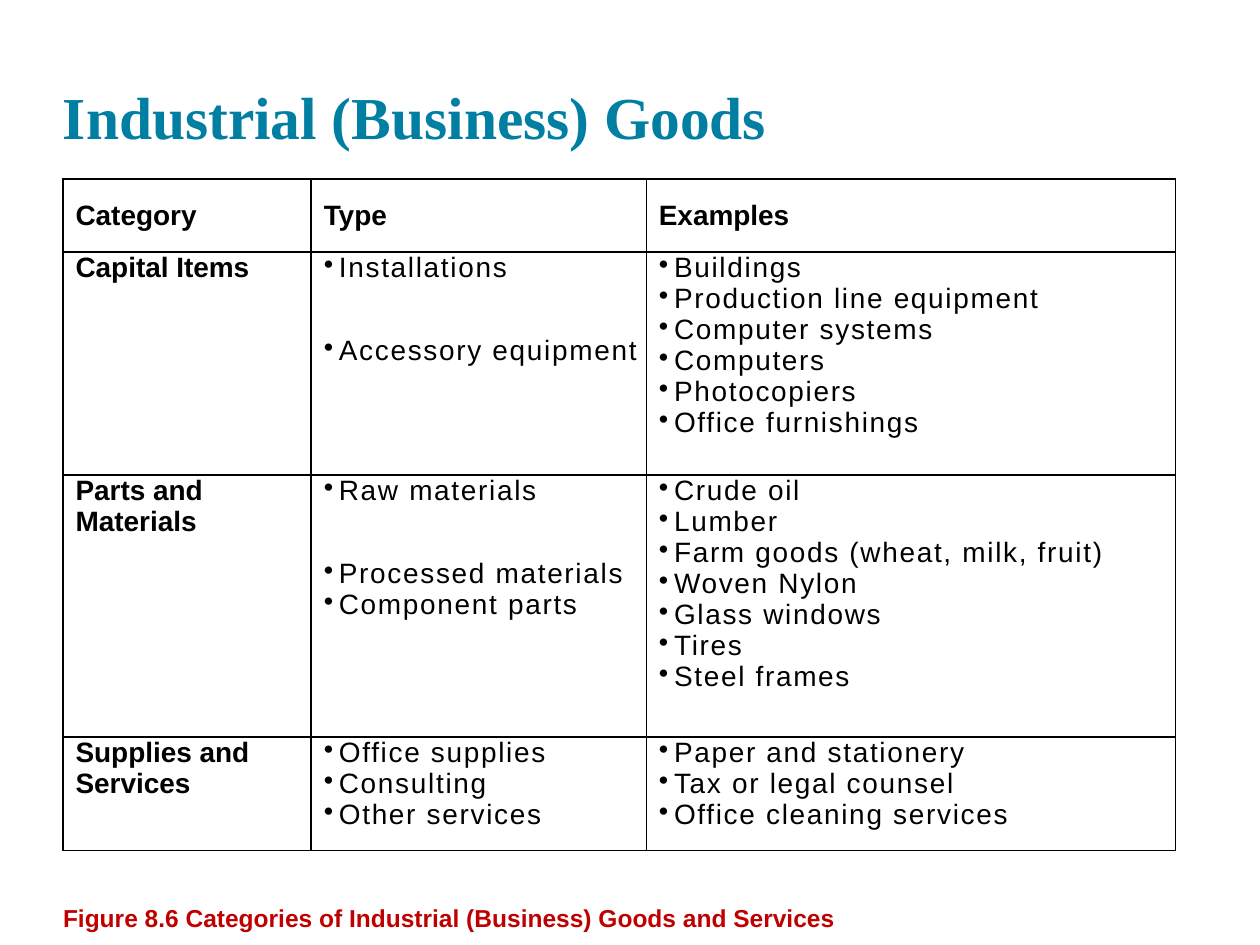
from lxml.etree import SubElement as Sub
from pptx import Presentation as Deck
from pptx.dml.color import RGBColor as Rgb
from pptx.enum.text import MSO_ANCHOR as Anchor
from pptx.oxml.ns import qn
from pptx.util import Inches, Pt

WIDE, HIGH = Inches(10), Inches(7.5)
INK = {"title": "007FA3", "text": "000000", "note": "C00000"}

# Table grid, in percent of the slide's width and height
COLS = [19.7, 26.6, 42]
ROWS = [7.73, 23.6, 27.73, 12]

HEAD = ["Category", "Type", "Examples"]
# Each group: name, types, examples, index of the type set apart by a gap
GROUPS = [
    ("Capital Items",
     ["Installations", "Accessory equipment"],
     ["Buildings", "Production line equipment", "Computer systems",
      "Computers", "Photocopiers", "Office furnishings"], 1),
    ("Parts and Materials",
     ["Raw materials", "Processed materials", "Component parts"],
     ["Crude oil", "Lumber", "Farm goods (wheat, milk, fruit)",
      "Woven Nylon", "Glass windows", "Tires", "Steel frames"], 1),
    ("Supplies and Services",
     ["Office supplies", "Consulting", "Other services"],
     ["Paper and stationery", "Tax or legal counsel",
      "Office cleaning services"], None),
]


def across(part):
    return round(WIDE * part / 100)


def down(part):
    return round(HIGH * part / 100)


def add_run(para, text, size, ink, bold=True, face="Arial"):
    run = para.add_run()
    run.text = text
    font = run.font
    font.name, font.size, font.bold = face, Pt(size), bold
    font.color.rgb = Rgb.from_string(INK[ink])
    return run


def add_text(slide, box, text, size, ink, face="Arial", anchor=Anchor.TOP):
    left, top, width, height = box
    frame = slide.shapes.add_textbox(
        across(left), down(top), across(width), down(height)).text_frame
    frame.word_wrap = True
    frame.vertical_anchor = anchor
    frame.margin_left = frame.margin_right = 0
    frame.margin_top = frame.margin_bottom = 0
    add_run(frame.paragraphs[0], text, size, ink, face=face)


def add_edges(cell):
    props = cell._tc.get_or_add_tcPr()
    for side in ("lnL", "lnR", "lnT", "lnB"):
        line = Sub(props, qn(f"a:{side}"), w=str(Pt(1)))
        fill = Sub(line, qn("a:solidFill"))
        Sub(fill, qn("a:srgbClr"), val=INK["text"])


def style_cell(cell, anchor):
    add_edges(cell)
    cell.fill.background()
    cell.vertical_anchor = anchor
    cell.margin_left, cell.margin_right = Inches(0.1), Inches(0.03)
    cell.margin_top = cell.margin_bottom = 0


def add_label(cell, text, anchor=Anchor.TOP):
    style_cell(cell, anchor)
    add_run(cell.text_frame.paragraphs[0], text, 16, "text")


def add_bullet(para):
    props = para._p.get_or_add_pPr()
    props.set("marL", str(Inches(0.12)))
    props.set("indent", str(-Inches(0.12)))
    Sub(props, qn("a:buChar"), char="•")
    tabs = Sub(props, qn("a:tabLst"))
    Sub(tabs, qn("a:tab"), pos=str(Inches(0.16)), algn="l")


def add_list(cell, items, gap=None):
    style_cell(cell, Anchor.TOP)
    frame = cell.text_frame
    for i, item in enumerate(items):
        para = frame.add_paragraph() if i else frame.paragraphs[0]
        add_bullet(para)
        if i == gap:
            para.space_before = Pt(30)
        run = add_run(para, item, 16, "text", bold=False)
        run._r.get_or_add_rPr().set("spc", "100")


def add_grid(slide):
    table = slide.shapes.add_table(
        len(ROWS), len(COLS), across(5), down(18.93),
        across(sum(COLS)), down(sum(ROWS))).table
    table.horz_banding = False
    for col, part in zip(table.columns, COLS):
        col.width = across(part)
    for row, part in zip(table.rows, ROWS):
        row.height = down(part)

    # Header row
    for c, text in enumerate(HEAD):
        add_label(table.cell(0, c), text, Anchor.MIDDLE)

    # Body rows
    for r, (name, types, goods, gap) in enumerate(GROUPS, 1):
        add_label(table.cell(r, 0), name)
        add_list(table.cell(r, 1), types, gap)
        add_list(table.cell(r, 2), goods)


def main():
    deck = Deck()
    deck.slide_width, deck.slide_height = WIDE, HIGH
    slide = deck.slides.add_slide(deck.slide_layouts[6])

    # Title
    add_text(slide, (5, 0, 90, 16), "Industrial (Business) Goods",
             34, "title", "Times New Roman", Anchor.BOTTOM)
    # Table of goods
    add_grid(slide)
    # Caption
    add_text(slide, (5, 95.6, 90.8, 6.53),
             "Figure 8.6 Categories of Industrial (Business) Goods and Services",
             14, "note")
    deck.save("out.pptx")


if __name__ == "__main__":
    main()
